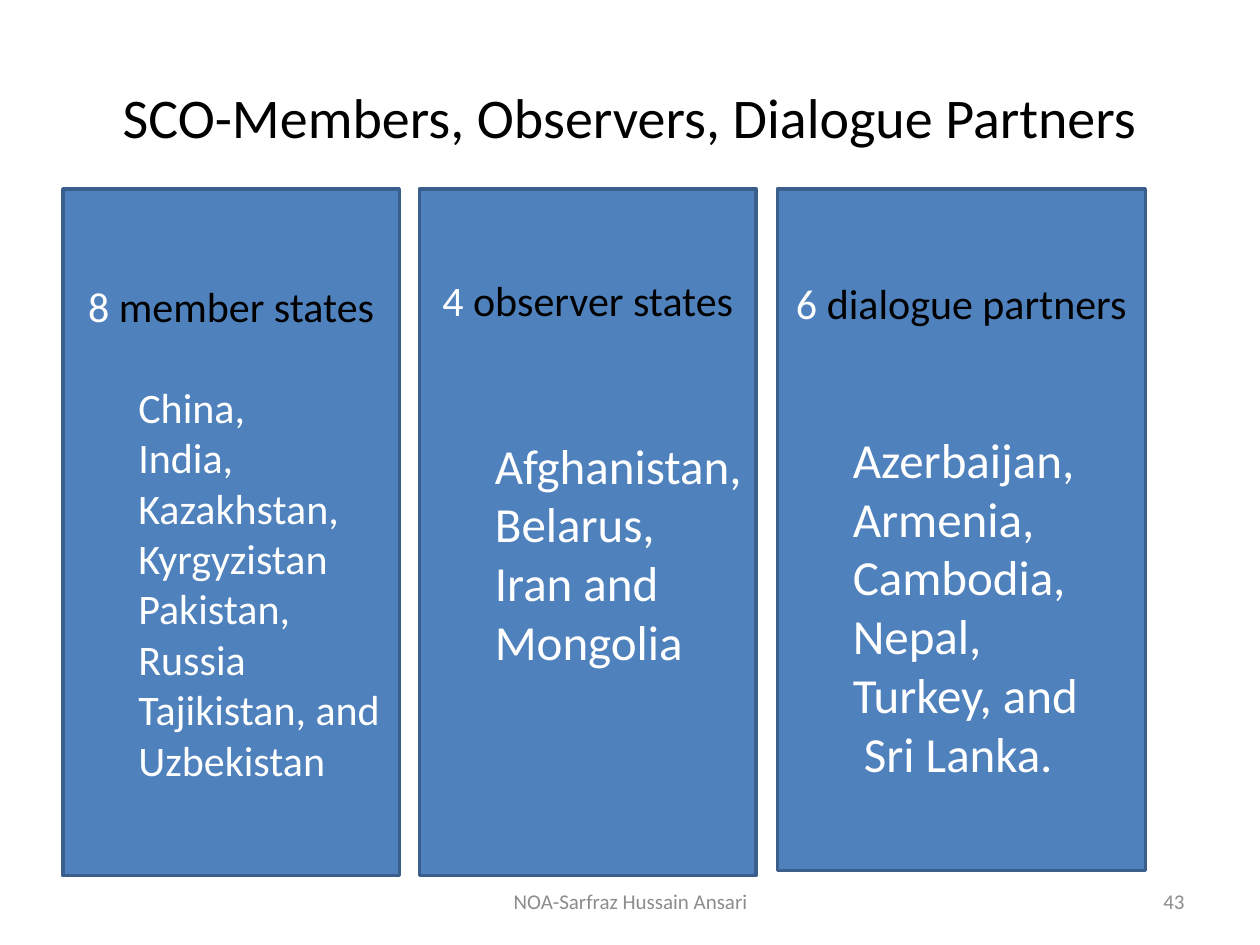
from dataclasses import dataclass

from pptx import Presentation
from pptx.dml.color import RGBColor
from pptx.enum.shapes import MSO_SHAPE
from pptx.enum.text import MSO_ANCHOR, PP_ALIGN
from pptx.util import Emu, Pt

PX_PER_INCH = 100


@dataclass(frozen=True)
class Theme:
    font: str = "Calibri"
    ink: str = "000000"
    paper: str = "FFFFFF"
    panel: str = "4F81BD"
    border: str = "3A5F8C"
    muted: str = "8C8C8C"
    title_size: int = 32
    heading_size: int = 24
    small_list_size: int = 24
    large_list_size: int = 28
    footer_size: int = 12


THEME = Theme()

GROUPS = [
    {
        "box": (50, 150, 267, 545),
        "count": "8 ",
        "heading": "member states",
        "countries": ["China,", "India,", "Kazakhstan,", "Kyrgyzistan", "Pakistan,",
                      "Russia", "Tajikistan, and", "Uzbekistan"],
        "size": THEME.small_list_size,
        "gap": 29,
        "bottom": 5,
    },
    {
        "box": (333, 150, 267, 545),
        "count": "4 ",
        "heading": "observer states",
        "countries": ["Afghanistan,", "Belarus,", "Iran and", "Mongolia"],
        "size": THEME.large_list_size,
        "gap": 63,
        "bottom": 100,
    },
    {
        "box": (617, 150, 292, 541),
        "count": "6 ",
        "heading": "dialogue partners",
        "countries": ["Azerbaijan,", "Armenia,", "Cambodia,", "Nepal,", "Turkey, and",
                      " Sri Lanka."],
        "size": THEME.large_list_size,
        "gap": 58,
        "bottom": 5,
    },
]


def px(length):
    return Emu(length * 914400 // PX_PER_INCH)


def place(shape, box):
    shape.left, shape.top, shape.width, shape.height = map(px, box)


def add_span(para, text, size, color):
    span = para.add_run()
    span.text = text
    span.font.name = THEME.font
    span.font.size = Pt(size)
    span.font.color.rgb = RGBColor.from_string(color)


def add_title(page, box, text):
    title = page.shapes.title
    place(title, box)
    title.text_frame.vertical_anchor = MSO_ANCHOR.MIDDLE
    para = title.text_frame.paragraphs[0]
    para.alignment = PP_ALIGN.CENTER
    add_span(para, text, THEME.title_size, THEME.ink)


def add_group(page, box, group):
    panel = page.shapes.add_shape(MSO_SHAPE.RECTANGLE, *map(px, box))
    panel.shadow.inherit = False
    panel.fill.solid()
    panel.fill.fore_color.rgb = RGBColor.from_string(THEME.panel)
    panel.line.color.rgb = RGBColor.from_string(THEME.border)
    panel.line.width = Pt(2)
    frame = panel.text_frame
    frame.word_wrap = True
    frame.vertical_anchor = MSO_ANCHOR.MIDDLE
    frame.margin_bottom = px(group["bottom"])

    heading = frame.paragraphs[0]
    heading.alignment = PP_ALIGN.CENTER
    add_span(heading, group["count"], THEME.heading_size, THEME.paper)
    add_span(heading, group["heading"], THEME.heading_size, THEME.ink)

    for index, country in enumerate(group["countries"]):
        para = frame.add_paragraph()
        para.level = 1
        para.alignment = PP_ALIGN.LEFT
        para.space_before = Pt(0 if index else group["gap"])
        properties = para._p.get_or_add_pPr()
        properties.set("marL", str(px(50)))
        properties.set("indent", "0")
        add_span(para, country, group["size"], THEME.paper)


def add_footer(page, box, text, alignment):
    frame = page.shapes.add_textbox(*map(px, box)).text_frame
    frame.word_wrap = True
    frame.vertical_anchor = MSO_ANCHOR.MIDDLE
    para = frame.paragraphs[0]
    para.alignment = alignment
    add_span(para, text, THEME.footer_size, THEME.muted)


def main():
    deck = Presentation()
    deck.slide_width, deck.slide_height = px(1000), px(750)
    page = deck.slides.add_slide(deck.slide_layouts[5])
    add_title(page, (50, 30, 900, 125), "SCO-Members, Observers, Dialogue Partners")
    for group in GROUPS:
        add_group(page, group["box"], group)
    add_footer(page, (342, 695, 317, 40), "NOA-Sarfraz Hussain Ansari", PP_ALIGN.CENTER)
    add_footer(page, (717, 695, 233, 40), "43", PP_ALIGN.RIGHT)
    deck.save("out.pptx")


if __name__ == "__main__":
    main()
